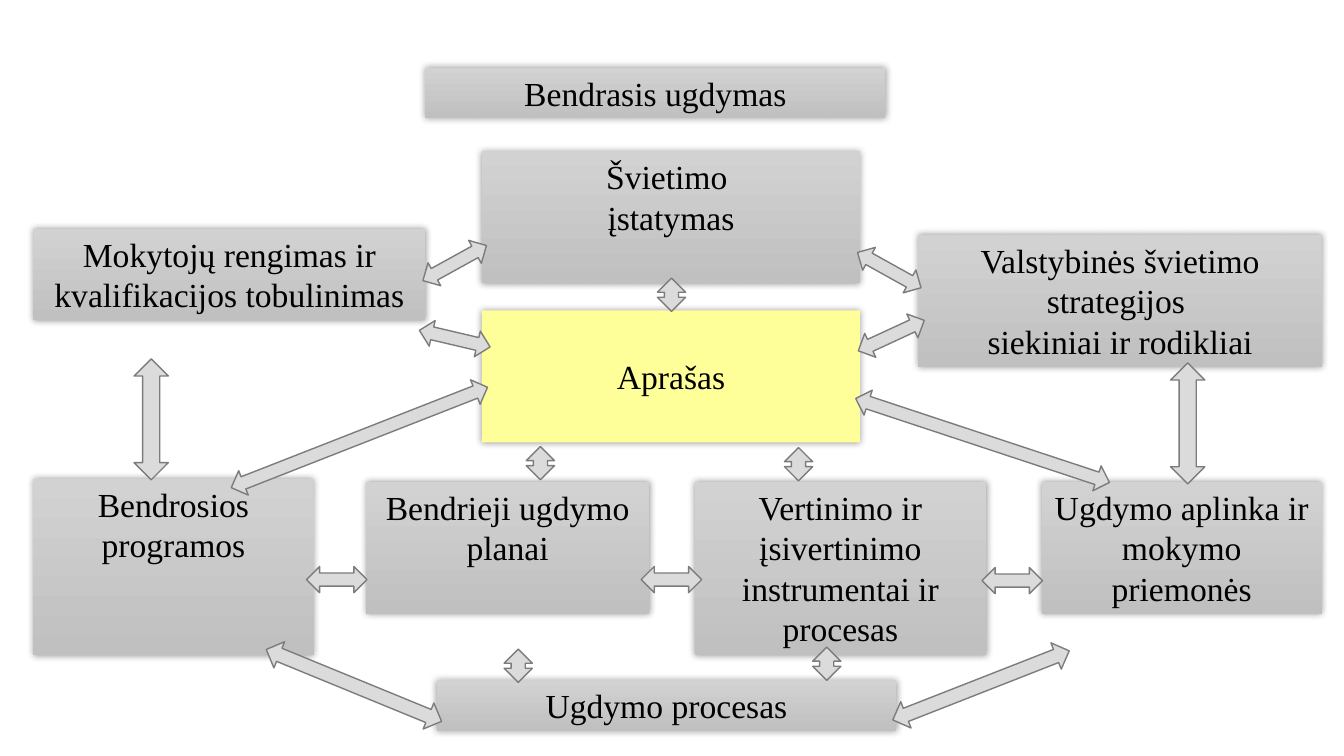
from lxml.etree import SubElement
from pptx import Presentation
from pptx.dml.color import RGBColor
from pptx.enum.shapes import MSO_SHAPE
from pptx.enum.text import MSO_ANCHOR, MSO_AUTO_SIZE, PP_ALIGN
from pptx.oxml.ns import qn
from pptx.util import Inches, Pt

COLORS = {
    "text": "000000", "highlight": "FFFF99", "shadow": "000000",
    "arrow": "DBDBDB", "arrow_line": "7C7C7C",
    "grey_top": "D2D2D2", "grey_bottom": "C0C0C0",
}
FONT = "Times New Roman"

TITLE = ("Bendrasis ugdymas", (4.22, 0.67, 4.56, 0.5))
CENTRE = ("Aprašas", (4.78, 3.08, 3.75, 1.31))
TOPICS = [
    ("Mokytojų rengimas ir kvalifikacijos tobulinimas", (0.33, 2.27, 3.89, 0.91)),
    ("Švietimo \nįstatymas", (4.78, 1.5, 3.75, 1.31)),
    ("Valstybinės švietimo strategijos \nsiekiniai ir rodikliai", (9.11, 2.33, 4, 1.31)),
    ("Bendrosios programos", (0.33, 4.75, 2.78, 1.75)),
    ("Bendrieji ugdymo planai", (3.63, 4.78, 2.81, 1.31)),
    ("Vertinimo ir įsivertinimo instrumentai ir procesas", (6.89, 4.78, 2.89, 1.72)),
    ("Ugdymo aplinka ir mokymo priemonės", (10.33, 4.78, 2.78, 1.31)),
    ("Ugdymo procesas", (4.33, 6.75, 4.56, 0.5)),
]

# Short vertical arrows: left, top
VERTICAL_SIZE = (0.28, 0.33)
VERTICAL_ARROWS = [(6.52, 2.76), (5.22, 4.43), (7.78, 4.44), (5, 6.44), (8.06, 6.42)]

# Other arrows, by size: left, top, rotation
SLOPED_ARROWS = {
    (0.72, 0.26): [(4.15, 2.48, 331.1), (8.46, 2.55, 29.1),
                   (4.15, 3.23, 13.2), (8.48, 3.2, 335.2)],
    (2.73, 0.26): [(2.2, 4.21, 338.6)],
    (2.65, 0.26): [(8.42, 4.24, 18.3)],
    (1.2, 0.34): [(0.9, 3.99, 270), (11.18, 4.03, 270)],
    (0.6, 0.26): [(3.04, 5.62, 0), (6.36, 5.62, 0), (9.74, 5.63, 0)],
    (1.88, 0.28): [(8.79, 6.66, 338.6), (2.57, 6.66, 22.3)],
}


def rgb(name):
    return RGBColor.from_string(COLORS[name])


def add_glow_shadow(shape):
    """Give the shape a soft shadow with no offset."""
    shape.shadow.inherit = False
    effects = shape.element.spPr.find(qn("a:effectLst"))
    shadow = SubElement(effects, qn("a:outerShdw"), blurRad=str(Pt(5)), dist="0", dir="0")
    color = SubElement(shadow, qn("a:srgbClr"), val=COLORS["shadow"])
    SubElement(color, qn("a:alpha"), val="40000")


def write_text(shape, text, size=24, color="text", anchor=MSO_ANCHOR.TOP):
    frame = shape.text_frame
    frame.text = text
    frame.word_wrap = True
    frame.auto_size = MSO_AUTO_SIZE.NONE
    frame.vertical_anchor = anchor
    for paragraph in frame.paragraphs:
        paragraph.alignment = PP_ALIGN.CENTER
        paragraph.font.name = FONT
        paragraph.font.size = Pt(size)
        paragraph.font.color.rgb = rgb(color)


def style_box(box, text, fill=None, **text_format):
    """Fill with the named colour, or with the grey gradient when none is given."""
    if fill:
        box.fill.solid()
        box.fill.fore_color.rgb = rgb(fill)
    else:
        box.fill.gradient()
        box.fill.gradient_angle = 270
        for stop, name in zip(box.fill.gradient_stops, ("grey_top", "grey_bottom")):
            stop.color.rgb = rgb(name)
    box.line.fill.background()
    add_glow_shadow(box)
    write_text(box, text, **text_format)


def add_shape(slide, kind, place):
    return slide.shapes.add_shape(kind, *map(Inches, place))


def add_arrow(slide, kind, place, rotation=0):
    arrow = add_shape(slide, kind, place)
    arrow.rotation = rotation
    arrow.shadow.inherit = False
    arrow.fill.solid()
    arrow.fill.fore_color.rgb = rgb("arrow")
    arrow.line.color.rgb = rgb("arrow_line")
    arrow.line.width = Pt(1)


def main():
    presentation = Presentation()
    presentation.slide_width = Inches(13.33)
    presentation.slide_height = Inches(7.5)
    slide = presentation.slides.add_slide(presentation.slide_layouts[5])

    title = slide.shapes.title
    heading, place = TITLE
    title.left, title.top, title.width, title.height = map(Inches, place)
    style_box(title, heading)

    for topic, place in TOPICS:
        style_box(add_shape(slide, MSO_SHAPE.RECTANGLE, place), topic)
    label, place = CENTRE
    style_box(add_shape(slide, MSO_SHAPE.RECTANGLE, place), label,
              fill="highlight", anchor=MSO_ANCHOR.MIDDLE)

    for corner in VERTICAL_ARROWS:
        add_arrow(slide, MSO_SHAPE.UP_DOWN_ARROW, corner + VERTICAL_SIZE)
    for size, arrows in SLOPED_ARROWS.items():
        for left, top, rotation in arrows:
            add_arrow(slide, MSO_SHAPE.LEFT_RIGHT_ARROW, (left, top) + size, rotation)

    presentation.save("out.pptx")


if __name__ == "__main__":
    main()
